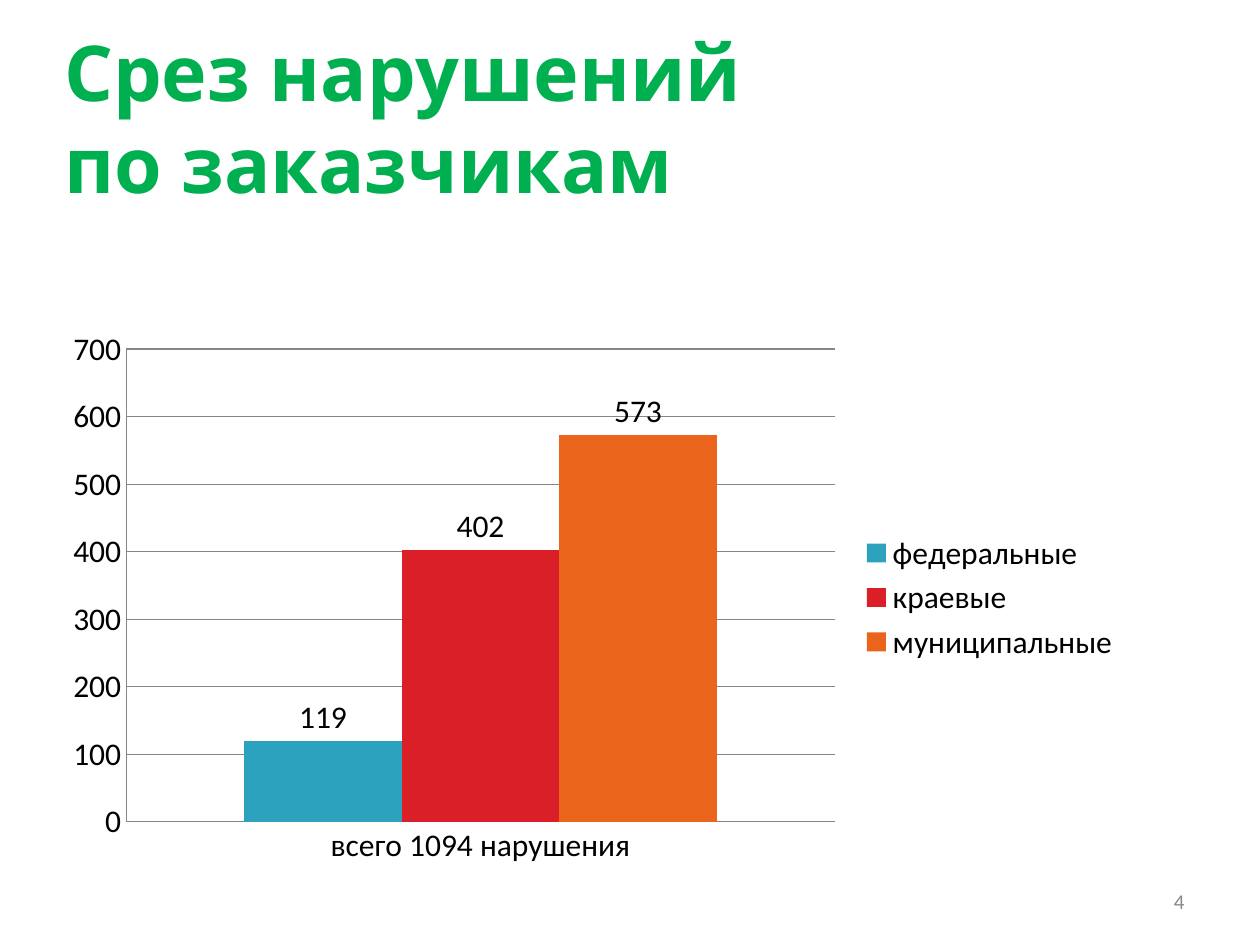
from dataclasses import dataclass

from pptx import Presentation
from pptx.chart.data import CategoryChartData
from pptx.dml.color import RGBColor
from pptx.enum.chart import (XL_CHART_TYPE, XL_LABEL_POSITION,
                             XL_LEGEND_POSITION, XL_TICK_MARK)
from pptx.enum.text import MSO_ANCHOR, PP_ALIGN
from pptx.util import Cm, Pt


@dataclass(frozen=True)
class Theme:
    title_font: str = "Karla"
    body_font: str = "Calibri"
    title_size: int = 44
    chart_size: int = 18
    number_size: int = 12
    title: str = "00B050"
    text: str = "000000"
    muted: str = "898989"
    axis: str = "868686"
    series: tuple = ("2DA2BF", "DA1F28", "EB641B")


THEME = Theme()
CATEGORY = "всего 1094 нарушения"
VIOLATIONS = {"федеральные": 119, "краевые": 402, "муниципальные": 573}


def set_font(font, name, size, color, bold=False):
    font.name, font.size, font.bold = name, Pt(size), bold
    font.color.rgb = RGBColor.from_string(color)


def place_title(s, text, left, top, width, height):
    sp = s.shapes.title
    sp.left, sp.top, sp.width, sp.height = left, top, width, height
    tf = sp.text_frame
    tf.text = text
    tf.vertical_anchor = MSO_ANCHOR.MIDDLE
    p = tf.paragraphs[0]
    p.alignment = PP_ALIGN.LEFT
    set_font(p.font, THEME.title_font, THEME.title_size, THEME.title, True)


def add_violations_chart(s, left, top, width, height):
    data = CategoryChartData()
    data.categories = [CATEGORY]
    for name, value in VIOLATIONS.items():
        data.add_series(name, [value])
    chart = s.shapes.add_chart(XL_CHART_TYPE.COLUMN_CLUSTERED,
                               left, top, width, height, data).chart
    set_font(chart.font, THEME.body_font, THEME.chart_size, THEME.text)
    chart.has_title = False
    chart.has_legend = True
    chart.legend.position = XL_LEGEND_POSITION.RIGHT
    chart.legend.include_in_layout = False

    # Axes and gridlines
    axis_color = RGBColor.from_string(THEME.axis)
    for axis in (chart.category_axis, chart.value_axis):
        axis.major_tick_mark = axis.minor_tick_mark = XL_TICK_MARK.NONE
        axis.format.line.color.rgb = axis_color
    values = chart.value_axis
    values.minimum_scale, values.maximum_scale, values.major_unit = 0, 700, 100
    values.major_gridlines.format.line.color.rgb = axis_color

    # Columns and their values
    plot = chart.plots[0]
    plot.vary_by_categories = False
    plot.gap_width, plot.overlap = 150, 0
    for series, color in zip(plot.series, THEME.series):
        series.format.fill.solid()
        series.format.fill.fore_color.rgb = RGBColor.from_string(color)
        labels = series.data_labels
        labels.show_value = True
        labels.position = XL_LABEL_POSITION.OUTSIDE_END


def add_slide_number(s, number, left, top, width, height):
    tf = s.shapes.add_textbox(left, top, width, height).text_frame
    tf.word_wrap = True
    tf.vertical_anchor = MSO_ANCHOR.MIDDLE
    p = tf.paragraphs[0]
    p.text = str(number)
    p.alignment = PP_ALIGN.RIGHT
    set_font(p.font, THEME.body_font, THEME.number_size, THEME.muted)


def main():
    prs = Presentation()
    prs.slide_width, prs.slide_height = Cm(25.4), Cm(19.05)
    s = prs.slides.add_slide(prs.slide_layouts[5])
    left = Cm(1.04)
    add_violations_chart(s, left, Cm(6.43), Cm(21.8), Cm(11.23))
    add_slide_number(s, 4, Cm(18.2), Cm(17.66), Cm(5.93), Cm(1.01))
    place_title(s, "Срез нарушений\vпо заказчикам",
                left, Cm(0.76), Cm(22.86), Cm(3.18))
    prs.save("out.pptx")


if __name__ == "__main__":
    main()
